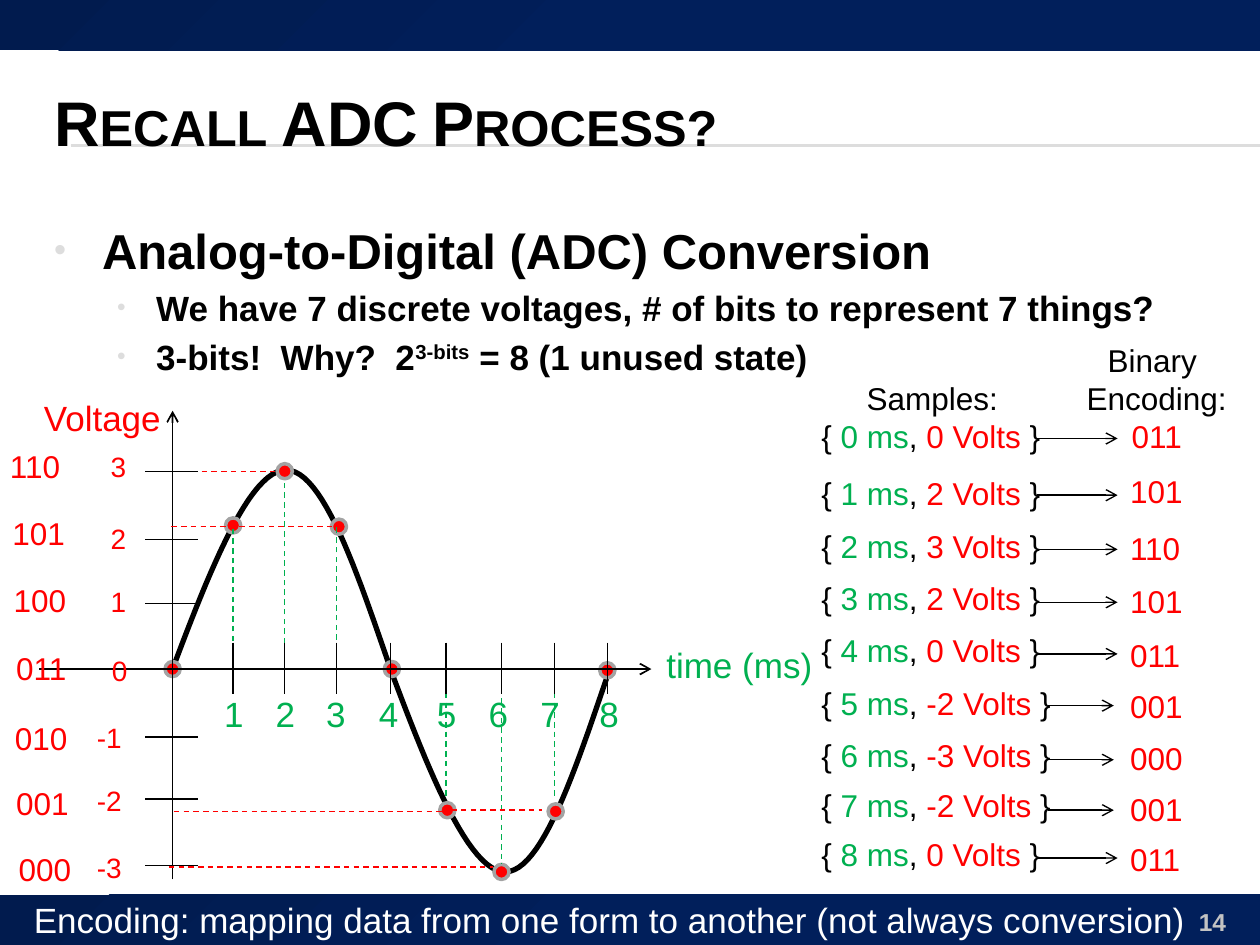
"""Builds a slide on sampling a sine wave and encoding the samples in binary."""
import pptx
import pptx.dml.color
import pptx.enum.dml
import pptx.enum.shapes
import pptx.enum.text
import pptx.oxml.ns
import pptx.util
import lxml.etree

BLACK, RED, GREEN, GREY = "000000", "FF0000", "00B050", "DDDDDD"
LEFT, CENTER, RIGHT = (pptx.enum.text.PP_ALIGN.LEFT, pptx.enum.text.PP_ALIGN.CENTER,
                       pptx.enum.text.PP_ALIGN.RIGHT)
qn = pptx.oxml.ns.qn


def color(value):
    return pptx.dml.color.RGBColor.from_string(value)


def write(para, pieces, size, bold=False):
    for text, shade in pieces:
        span = para.add_run()
        span.text = text
        span.font.name = "Arial"
        span.font.size = pptx.util.Pt(size)
        span.font.bold = bold
        span.font.color.rgb = color(shade)


deck = pptx.Presentation()
deck.slide_width, deck.slide_height = pptx.util.Inches(10), pptx.util.Inches(7.5)
column, row = deck.slide_width / 10, deck.slide_height / 7.5
page = deck.slides.add_slide(deck.slide_layouts[1])
shapes = page.shapes

title = shapes.title
title.left, title.top = int(0.33 * column), int(0.5 * row)
title.width, title.height = int(9.5 * column), int(0.92 * row)
title.text_frame.vertical_anchor = pptx.enum.text.MSO_ANCHOR.MIDDLE
title.text_frame.auto_size = pptx.enum.text.MSO_AUTO_SIZE.NONE
para = title.text_frame.paragraphs[0]
para.alignment = LEFT
write(para, [("Recall ADC Process?", BLACK)], 36, True)
para.runs[0]._r.get_or_add_rPr().set("cap", "small")

body = page.placeholders[1]
body.left, body.top = int(0.33 * column), int(1.7 * row)
body.width, body.height = int(10.24 * column), int(5.3 * row)
body.text_frame.auto_size = pptx.enum.text.MSO_AUTO_SIZE.NONE
bullets = [
    (0, 28, 0.38, 0.38, ["Analog-to-Digital (ADC) Conversion"]),
    (1, 20, 0.81, 0.31, ["We have 7 discrete voltages, # of bits to represent 7 things?"]),
    (1, 20, 0.81, 0.31, ["3-bits!  Why?  2", "3-bits", " = 8 (1 unused state)"]),
]
for index, (level, size, margin, hanging, texts) in enumerate(bullets):
    para = body.text_frame.add_paragraph() if index else body.text_frame.paragraphs[0]
    para.level = level
    write(para, [(text, BLACK) for text in texts], size, True)
    settings = para._p.get_or_add_pPr()
    settings.set("marL", str(int(margin * column)))
    settings.set("indent", str(int(-hanging * column)))
    shade = lxml.etree.SubElement(settings, qn("a:buClr"))
    lxml.etree.SubElement(shade, qn("a:srgbClr"), val=GREY)
    lxml.etree.SubElement(settings, qn("a:buSzPct"), val="70000")
    lxml.etree.SubElement(settings, qn("a:buFont"), typeface="Arial")
    lxml.etree.SubElement(settings, qn("a:buChar"), char="•")
para.runs[1]._r.get_or_add_rPr().set("baseline", "30000")

for top in (0, 7.1):
    band = shapes.add_shape(pptx.enum.shapes.MSO_SHAPE.RECTANGLE, 0, int(top * row),
                            deck.slide_width, int(0.4 * row))
    band.shadow.inherit = False
    band.line.fill.background()
    band.fill.gradient()
    band.fill.gradient_angle = 315
    for stop, (position, shade) in zip(band.fill.gradient_stops, [(0, "011B4E"), (0.5, "011F5B")]):
        stop.position = position
        stop.color.rgb = color(shade)
    shapes._spTree.insert(2, band._element)

for start, middle, end in [((1.37, 5.31), (2.27, 3.73), (3.11, 5.34)),
                           ((3.11, 5.34), (4.01, 6.92), (4.84, 5.31))]:
    points = []
    for first, last, pulls in [(start, middle, (0.33, 0.68)), (middle, end, (0.35, 0.67))]:
        rise = last[1] - first[1]
        rising_in = first == start
        handles = [(first[0] + pulls[0] * (last[0] - first[0]), first[1] + (rise / 2 if rising_in else 0)),
                   (first[0] + pulls[1] * (last[0] - first[0]), last[1] - (0 if rising_in else rise / 2))]
        for step in range(25):
            t = step / 24
            weights = ((1 - t) ** 3, 3 * t * (1 - t) ** 2, 3 * t * t * (1 - t), t ** 3)
            knots = (first, *handles, last)
            points.append((sum(w * k[0] for w, k in zip(weights, knots)) * column,
                           sum(w * k[1] for w, k in zip(weights, knots)) * row))
    builder = shapes.build_freeform(*points[0])
    builder.add_line_segments(points[1:], close=False)
    wave = builder.convert_to_shape()
    wave.shadow.inherit = False
    wave.fill.background()
    wave.line.color.rgb = color(BLACK)
    wave.line.width = pptx.util.Pt(3)

dots = [(1.37, 5.31), (1.85, 4.17), (2.26, 3.74), (2.69, 4.18), (3.11, 5.31),
        (3.55, 6.43), (3.98, 6.92), (4.41, 6.44), (4.82, 5.32)]
for x, y in dots:
    dot = shapes.add_shape(pptx.enum.shapes.MSO_SHAPE.OVAL, int((x - 0.06) * column),
                           int((y - 0.06) * row), int(0.12 * column), int(0.12 * row))
    dot.shadow.inherit = False
    dot.fill.solid()
    dot.fill.fore_color.rgb = color(RED)
    dot.line.color.rgb = color("A3A3A3")
    dot.line.width = pptx.util.Pt(2)

times = [(1.85, 1.68), (2.26, 2.09), (2.67, 2.49), (3.1, 2.91),
         (3.54, 3.37), (3.98, 3.78), (4.4, 4.19), (4.82, 4.66)]
levels = [("3", "110", 3.74, 0.78, 3.52, -0.02, 3.5), ("2", "101", 4.28, 0.78, 4.09, 0, 4.03),
          ("1", "100", 4.79, 0.78, 4.59, 0.01, 4.56), ("0", "011", None, 0.79, 5.14, 0.03, 5.1),
          ("-1", "010", 5.85, 0.67, 5.67, 0.02, 5.66), ("-2", "001", 6.34, 0.67, 6.17, 0.03, 6.17),
          ("-3", "000", 6.87, 0.67, 6.7, 0.05, 6.7)]
samples = [("0", "011", 3.27, 3.27, 3.48), ("2", "101", 3.71, 3.7, 3.93),
           ("3", "110", 4.13, 4.15, 4.36), ("2", "101", 4.55, 4.57, 4.78),
           ("0", "011", 4.96, 5, 5.19), ("-2", "001", 5.38, 5.4, 5.6),
           ("-3", "000", 5.79, 5.82, 6.03), ("-2", "001", 6.19, 6.22, 6.43),
           ("0", "011", 6.58, 6.62, 6.81)]

lines = [(0.56, 1.15, 10, 1.15, GREY, 0.75, "rule"), (0.56, 1.16, 10, 1.16, GREY, 0.75, "rule"),
         (0.31, 5.31, 5.17, 5.31, BLACK, 1, "arrow"), (1.37, 6.98, 1.37, 3.26, BLACK, 1, "arrow")]
drops = [(1.85, 5.32, 4.17), (2.26, 5.34, 3.8), (2.67, 5.31, 4.17),
         (3.54, 5.19, 6.34), (3.98, 5.31, 6.86), (4.4, 5.19, 6.34)]
lines += [(x, start, x, end, GREEN, 0.79, "dash") for x, start, end in drops]
reaches = [(1.36, 2.67, 4.18), (1.37, 2.25, 3.74), (1.36, 1.83, 4.18),
           (1.34, 3.91, 6.88), (1.38, 3.61, 6.44), (3.58, 4.3, 6.43)]
lines += [(start, y, end, y, RED, 0.79, "dash") for start, end, y in reaches]
lines += [(x, 5.1, x, 5.51, BLACK, 0.79, "plain") for x, _ in times]
lines += [(1.57, level[2], 1.15, level[2], BLACK, 0.79, "plain") for level in levels if level[2]]
lines += [(8.32 if volts[0] == "-" else 8.23, y, 8.84 if volts[0] == "-" else 8.87, y,
           BLACK, 0.79, "arrow") for volts, _, _, _, y in samples]
for x1, y1, x2, y2, shade, width, style in lines:
    line = shapes.add_connector(pptx.enum.shapes.MSO_CONNECTOR.STRAIGHT, int(x1 * column),
                                int(y1 * row), int(x2 * column), int(y2 * row))
    line.line.color.rgb = color(shade)
    line.line.width = pptx.util.Pt(width)
    if style == "dash":
        line.line.dash_style = pptx.enum.dml.MSO_LINE.DASH
    if style == "arrow":
        lxml.etree.SubElement(line.line._get_or_add_ln(), qn("a:tailEnd"), type="arrow")
    lxml.etree.SubElement(line._element.spPr, qn("a:effectLst"))
    if style == "rule":
        shapes._spTree.insert(2, line._element)

labels = [(5.19, 5.06, 1.37, 0.44, 20, [(LEFT, [("time (ms)", GREEN)])]),
          (0.25, 3.1, 1.14, 0.44, 20, [(LEFT, [("Voltage", RED)])]),
          (0.17, 7.08, 9.4, 0.44, 20, [(LEFT, [(
              "Encoding: mapping data from one form to another (not always conversion)", "FFFFFF")])]),
          (9, 7.15, 0.83, 0.27, 14, [(RIGHT, [("14", "C3C3C3")])])]
for number, (_, left) in enumerate(times, 1):
    labels.append((left, 5.45, 0.36, 0.44, 20, [(LEFT, [(str(number), GREEN)])]))
for volts, code, _, left, top, code_left, code_top in levels:
    labels.append((left, top, 0.33 if len(volts) == 1 else 0.4, 0.37, 16, [(LEFT, [(volts, RED)])]))
    labels.append((code_left, code_top, 0.62, 0.4, 18, [(LEFT, [(code, RED)])]))
for moment, (volts, code, top, code_top, _) in enumerate(samples):
    reading = (LEFT, [("{ ", BLACK), (f"{moment} ms", GREEN), (", ", BLACK),
                      (f"{volts} Volts", RED), (" }", BLACK)])
    if moment == 0:
        labels.append((6.42, 2.96, 1.96, 0.71, 18, [(CENTER, [("Samples:", BLACK)]), reading]))
        labels.append((8.52, 2.66, 1.32, 1.01, 18, [(CENTER, [("Binary ", BLACK)]),
                                                    (CENTER, [("Encoding:", BLACK)]),
                                                    (CENTER, [(code, RED)])]))
    else:
        labels.append((6.42, top, 2.04 if volts[0] == "-" else 1.96, 0.4, 18, [reading]))
        labels.append((8.87, code_top, 0.62, 0.4, 18, [(LEFT, [(code, RED)])]))
for left, top, width, height, size, paragraphs in labels:
    box = shapes.add_textbox(int(left * column), int(top * row), int(width * column), int(height * row))
    box.text_frame.word_wrap = size == 14
    if size != 14:
        box.text_frame.auto_size = pptx.enum.text.MSO_AUTO_SIZE.SHAPE_TO_FIT_TEXT
    for index, (alignment, pieces) in enumerate(paragraphs):
        para = box.text_frame.add_paragraph() if index else box.text_frame.paragraphs[0]
        para.alignment = alignment
        write(para, pieces, size, size == 14)

deck.save("out.pptx")
